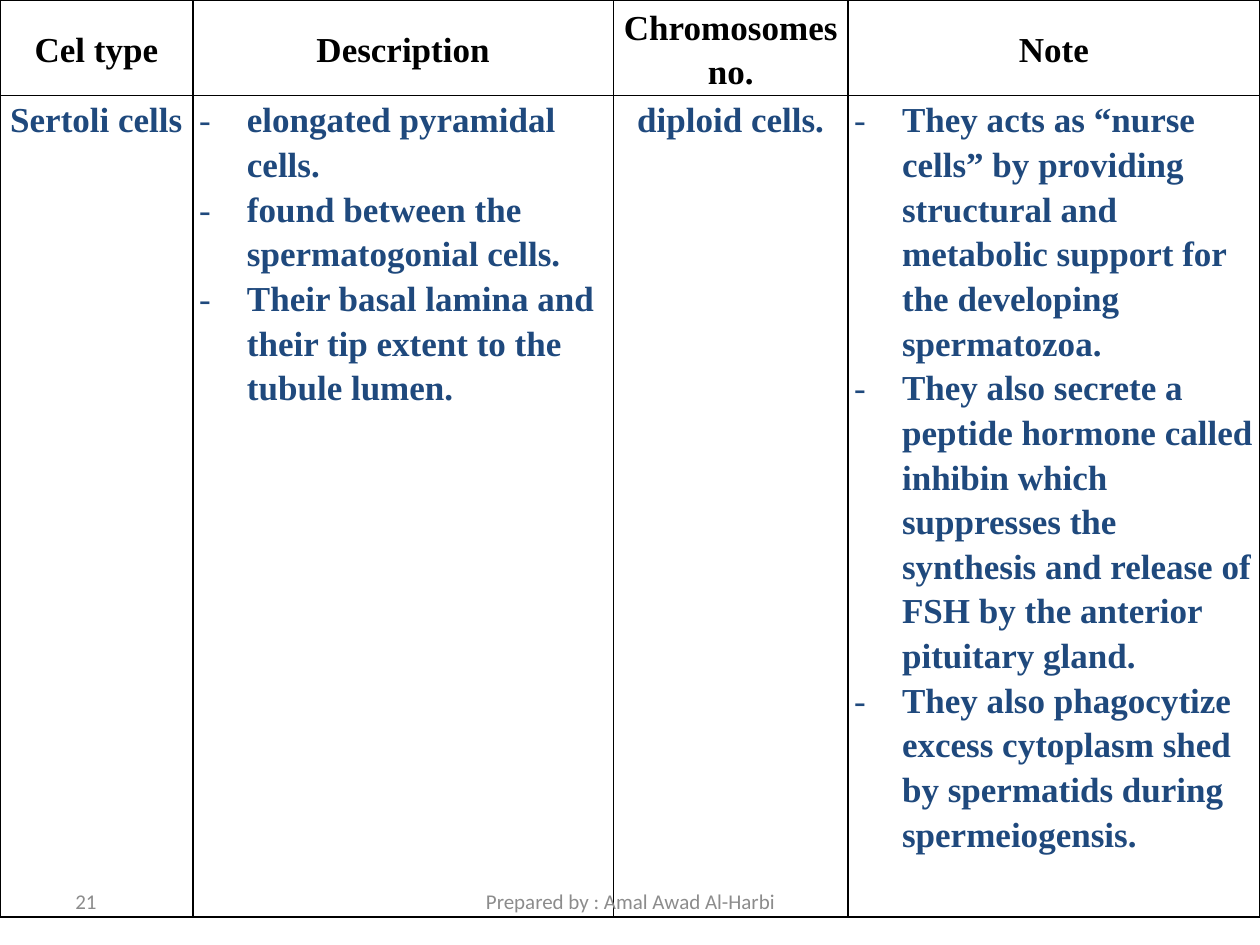
from dataclasses import dataclass

from lxml.etree import SubElement
from pptx import Presentation
from pptx.dml.color import RGBColor
from pptx.enum.text import MSO_ANCHOR as Anchor, PP_ALIGN as Align
from pptx.oxml.ns import qn
from pptx.util import Inches, Pt

BLACK, NAVY, GREY = "000000", "1F497D", "8C8C8C"
TABLE_FONT, FOOTER_FONT = "Times New Roman", "Calibri"
ROW_HEIGHTS = (0.76, 6.52)


@dataclass
class Column:
    width: float
    heading: str
    items: list[str]
    bulleted: bool = False


@dataclass
class FooterItem:
    left: float
    width: float
    text: str
    align: Align


COLUMNS = [
    Column(1.53, "Cel type", ["Sertoli cells"]),
    Column(3.34, "Description", [
        "elongated pyramidal cells.",
        "found between the spermatogonial cells.",
        "Their basal lamina and their tip extent to the tubule lumen.",
    ], bulleted=True),
    Column(1.86, "Chromosomes no.", ["diploid cells."]),
    Column(3.27, "Note", [
        "They acts as “nurse cells” by providing structural and metabolic "
        "support for the developing spermatozoa.",
        "They also secrete a peptide hormone called inhibin which suppresses "
        "the synthesis and release of FSH by the anterior pituitary gland.",
        "They also phagocytize excess cytoplasm shed by spermatids during "
        "spermeiogensis.",
    ], bulleted=True),
]

FOOTER = [
    FooterItem(0.5, 2.33, "21", Align.LEFT),
    FooterItem(3.42, 3.17, "Prepared by : Amal Awad Al-Harbi", Align.CENTER),
]


def add_run(p, text: str, font: str, size: float, color: str, bold: bool = False) -> None:
    r = p.add_run()
    r.text = text
    r.font.name = font
    r.font.size = Pt(size)
    r.font.bold = bold
    r.font.color.rgb = RGBColor.from_string(color)


def add_dash(p) -> None:
    """Give the paragraph a hanging dash bullet."""
    pPr = p._p.get_or_add_pPr()
    pPr.set("marL", str(Inches(0.38)))
    pPr.set("indent", str(-Inches(0.38)))
    SubElement(pPr, qn("a:buFont"), typeface=TABLE_FONT)
    SubElement(pPr, qn("a:buChar"), char="-")


def add_borders(cell) -> None:
    tcPr = cell._tc.get_or_add_tcPr()
    for index, side in enumerate(("lnL", "lnR", "lnT", "lnB")):
        ln = SubElement(tcPr, qn(f"a:{side}"), w=str(Pt(1)))
        fill = SubElement(ln, qn("a:solidFill"))
        SubElement(fill, qn("a:srgbClr"), val=BLACK)
        tcPr.remove(ln)
        tcPr.insert(index, ln)


def fill_cell(cell, items: list[str], color: str, anchor: Anchor, bulleted: bool = False) -> None:
    cell.fill.background()
    add_borders(cell)
    cell.vertical_anchor = anchor
    cell.margin_left = cell.margin_right = Inches(0.05)
    cell.margin_top = cell.margin_bottom = 0
    tf = cell.text_frame
    for index, item in enumerate(items):
        p = tf.add_paragraph() if index else tf.paragraphs[0]
        p.line_spacing = 1.15
        if bulleted:
            add_dash(p)
        else:
            p.alignment = Align.CENTER
        add_run(p, item, TABLE_FONT, 20, color, bold=True)


def add_cell_table(slide, columns: list[Column]) -> None:
    frame = slide.shapes.add_table(
        len(ROW_HEIGHTS), len(columns), 0, 0, Inches(10), Inches(sum(ROW_HEIGHTS)))
    table = frame.table
    table.horz_banding = False
    for row, height in zip(table.rows, ROW_HEIGHTS):
        row.height = Inches(height)
    for index, column in enumerate(columns):
        table.columns[index].width = Inches(column.width)
        fill_cell(table.cell(0, index), [column.heading], BLACK, Anchor.MIDDLE)
        fill_cell(table.cell(1, index), column.items, NAVY, Anchor.TOP, column.bulleted)


def add_footer_item(slide, item: FooterItem) -> None:
    box = slide.shapes.add_textbox(
        Inches(item.left), Inches(6.95), Inches(item.width), Inches(0.4))
    tf = box.text_frame
    tf.word_wrap = True
    tf.vertical_anchor = Anchor.MIDDLE
    p = tf.paragraphs[0]
    p.alignment = item.align
    add_run(p, item.text, FOOTER_FONT, 12, GREY)


def main() -> None:
    prs = Presentation()
    prs.slide_width, prs.slide_height = Inches(10), Inches(7.5)
    slide = prs.slides.add_slide(prs.slide_layouts[6])
    add_cell_table(slide, COLUMNS)
    for item in FOOTER:
        add_footer_item(slide, item)
    prs.save("out.pptx")


if __name__ == "__main__":
    main()
